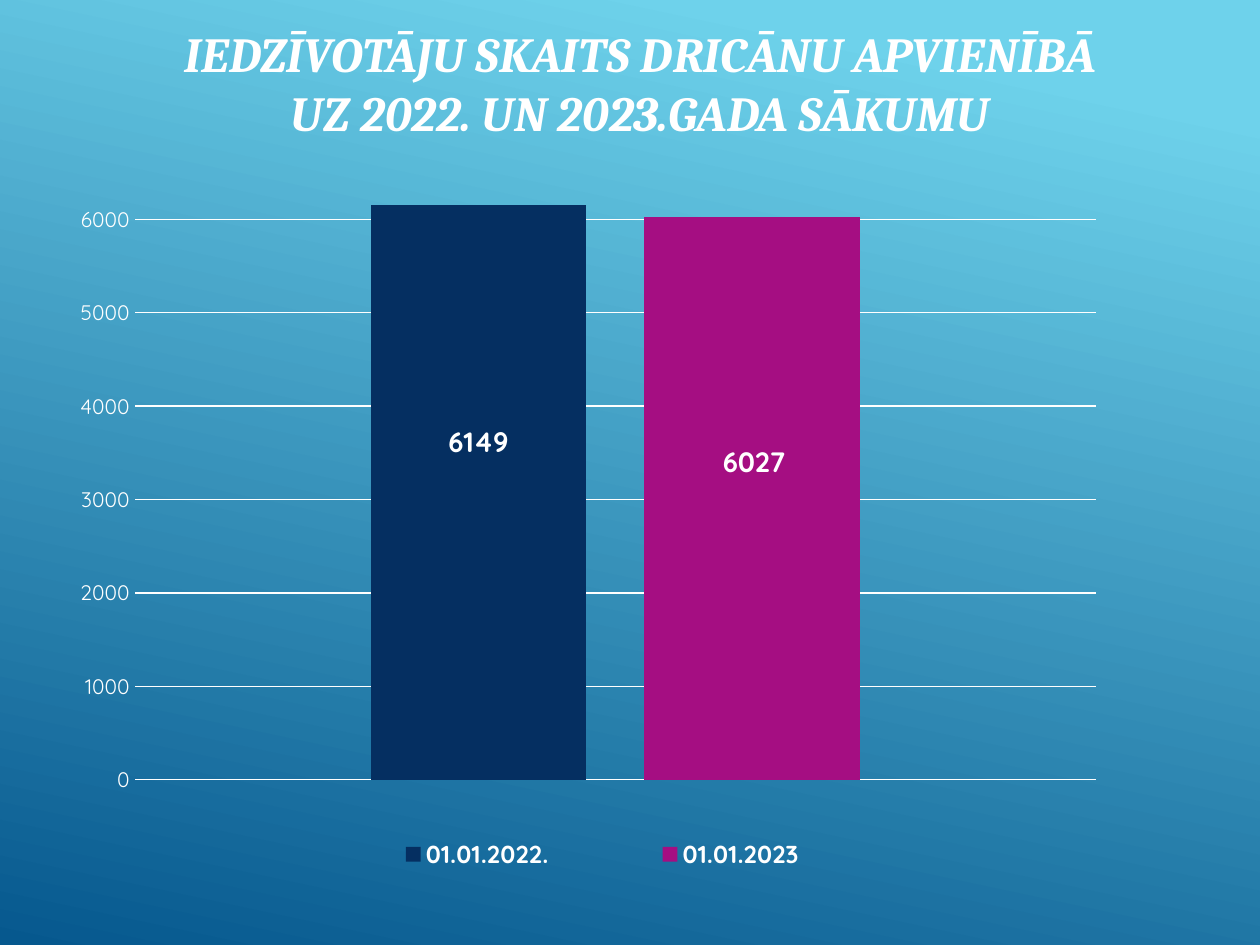
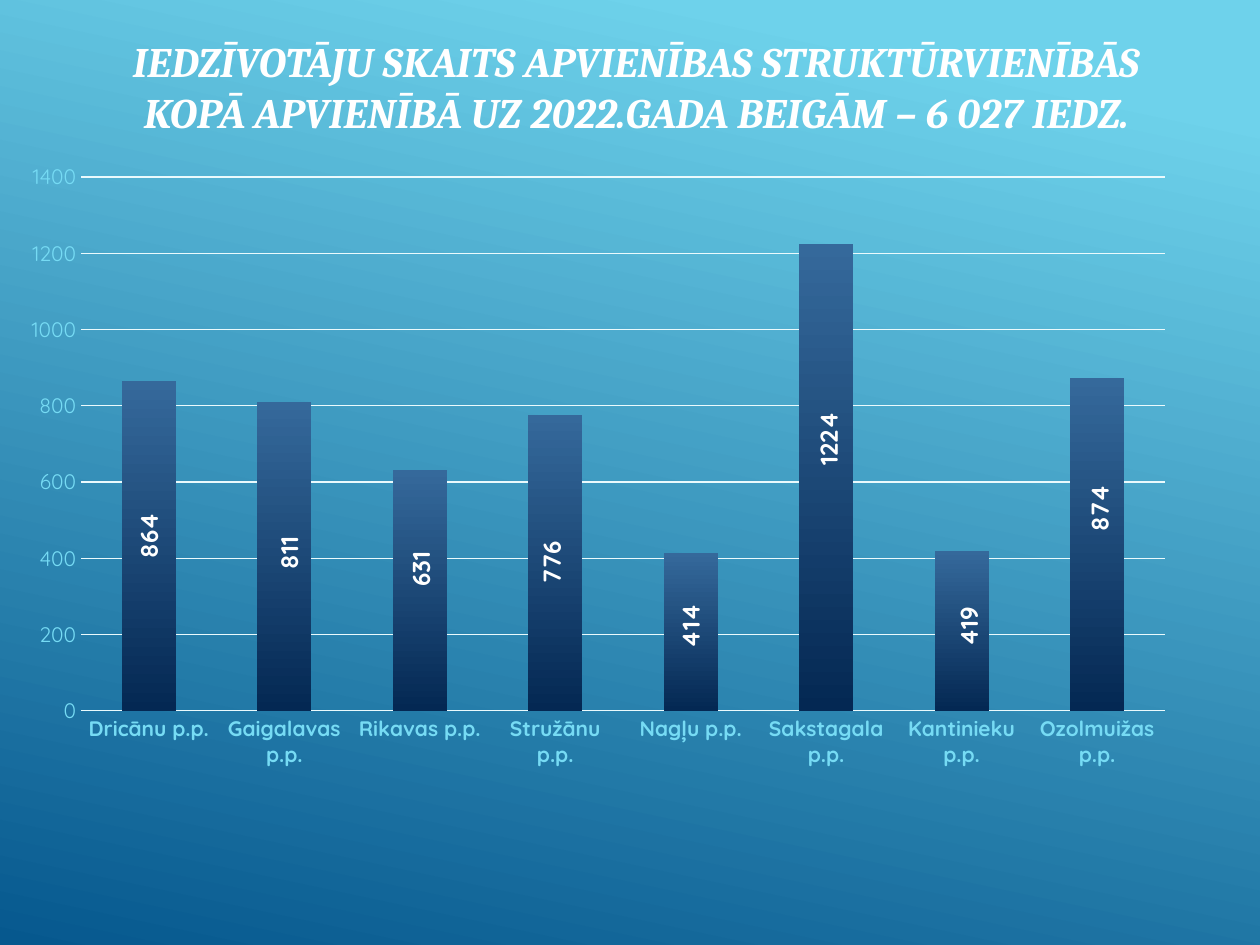
from dataclasses import dataclass

from lxml import etree
from pptx import Presentation
from pptx.chart.axis import ValueAxis
from pptx.chart.chart import Chart
from pptx.chart.data import CategoryChartData
from pptx.chart.series import BarSeries
from pptx.dml.color import RGBColor
from pptx.dml.fill import FillFormat
from pptx.enum.chart import XL_CHART_TYPE, XL_LABEL_POSITION, XL_LEGEND_POSITION, XL_TICK_MARK
from pptx.enum.text import MSO_ANCHOR, PP_ALIGN
from pptx.oxml.ns import qn
from pptx.presentation import Presentation as Deck
from pptx.slide import Slide
from pptx.text.text import Font
from pptx.util import Cm, Pt

CLUSTERED = XL_CHART_TYPE.COLUMN_CLUSTERED
LABEL_CENTER = XL_LABEL_POSITION.CENTER
LEGEND_BOTTOM = XL_LEGEND_POSITION.BOTTOM
NO_TICK = XL_TICK_MARK.NONE
MIDDLE = MSO_ANCHOR.MIDDLE
CENTER = PP_ALIGN.CENTER

WHITE = RGBColor(0xFF, 0xFF, 0xFF)
SKY = RGBColor(0x6E, 0xD2, 0xEB)
DEEP_BLUE = RGBColor(0x06, 0x58, 0x8E)
NAVY = RGBColor(0x05, 0x2F, 0x61)
MAGENTA = RGBColor(0xA5, 0x0E, 0x82)
PALE_CYAN = RGBColor(0xEA, 0xFA, 0xFD)
BRIGHT_CYAN = RGBColor(0x76, 0xDB, 0xF4)
BAR_TOP = RGBColor(0x35, 0x69, 0x9B)
BAR_FOOT = RGBColor(0x04, 0x28, 0x53)

TITLE_FONT = "Cambria"
CHART_FONT = "Quicksand"
VERTICAL = "-5400000"


@dataclass(frozen=True)
class Frame:
    left: float
    top: float
    width: float
    height: float

    def lengths(self) -> tuple[Cm, Cm, Cm, Cm]:
        return Cm(self.left), Cm(self.top), Cm(self.width), Cm(self.height)


@dataclass(frozen=True)
class PercentArea:
    left: float
    top: float
    width: float
    height: float

    def values(self) -> dict[str, object]:
        return {"xMode": "edge", "yMode": "edge",
                "x": self.left / 100, "y": self.top / 100,
                "w": self.width / 100, "h": self.height / 100}


@dataclass(frozen=True)
class Title:
    text: str
    size: int
    frame: Frame


@dataclass(frozen=True)
class Columns:
    frame: Frame
    plot_area: PercentArea
    categories: list[str]
    series: dict[str, list[int]]
    gap: int
    overlap: int
    axis_top: int
    axis_step: int
    axis_color: RGBColor
    grid_color: RGBColor


def style_font(font: Font, face: str, size: int, color: RGBColor, bold: bool = False) -> None:
    font.name = face
    font.size = Pt(size)
    font.bold = bold
    font.color.rgb = color


def fill_gradient(fill: FillFormat, start: RGBColor, end: RGBColor,
                  angle: int, first_stop: float = 0) -> None:
    fill.gradient()
    fill.gradient_angle = angle
    for stop, color, position in zip(fill.gradient_stops, (start, end), (first_stop, 1)):
        stop.color.rgb = color
        stop.position = position


def set_layout(parent: etree._Element, index: int, values: dict[str, object]) -> None:
    for old in parent.findall(qn("c:layout")):
        parent.remove(old)
    layout = etree.Element(qn("c:layout"))
    manual = etree.SubElement(layout, qn("c:manualLayout"))
    for name, value in values.items():
        etree.SubElement(manual, qn(f"c:{name}")).set("val", str(value))
    parent.insert(index, layout)


def add_page(deck: Deck, title: Title) -> Slide:
    page = deck.slides.add_slide(deck.slide_layouts[6])
    fill_gradient(page.background.fill, SKY, DEEP_BLUE, 258, 0.1)
    frame = page.shapes.add_textbox(*title.frame.lengths()).text_frame
    frame.word_wrap = True
    frame.vertical_anchor = MIDDLE
    para = frame.paragraphs[0]
    para.text = title.text
    para.alignment = CENTER
    for span in para.runs:
        style_font(span.font, TITLE_FONT, title.size, WHITE, True)
        span.font.italic = True
    return page


def style_value_axis(axis: ValueAxis, columns: Columns) -> None:
    axis.minimum_scale = 0
    axis.maximum_scale = columns.axis_top
    axis.major_unit = columns.axis_step
    axis.major_tick_mark = NO_TICK
    axis.format.line.fill.background()
    style_font(axis.tick_labels.font, CHART_FONT, 12, columns.axis_color)
    grid = axis.major_gridlines.format.line
    grid.color.rgb = columns.grid_color
    grid.width = Pt(0.75)


def add_columns(page: Slide, columns: Columns) -> Chart:
    data = CategoryChartData()
    data.categories = columns.categories
    for name, values in columns.series.items():
        data.add_series(name, values)
    chart = page.shapes.add_chart(CLUSTERED, *columns.frame.lengths(), data).chart
    chart.has_title = False
    chart.has_legend = False
    style_font(chart.font, CHART_FONT, 10, WHITE)
    plot = chart.plots[0]
    plot.gap_width = columns.gap
    plot.overlap = columns.overlap
    plot.vary_by_categories = False
    style_value_axis(chart.value_axis, columns)
    plot_area = chart._chartSpace.find(".//" + qn("c:plotArea"))
    set_layout(plot_area, 0, {"layoutTarget": "inner", **columns.plot_area.values()})
    return chart


def label_points(series: BarSeries, size: int, shifts: list[tuple[int, int]],
                 rotation: str = "0") -> None:
    for index in range(len(shifts)):
        label = series.points[index].data_label
        label.position = LABEL_CENTER
        style_font(label.font, CHART_FONT, size, WHITE, True)
    for element, (across, down) in zip(series._element.iter(qn("c:dLbl")), shifts):
        set_layout(element, 1, {"x": across / 1000, "y": down / 1000})
        element.find(".//" + qn("a:bodyPr")).set("rot", rotation)
    for leader in series._element.iter(qn("c:showLeaderLines")):
        leader.set("val", "0")


def add_yearly_page(deck: Deck) -> None:
    page = add_page(deck, Title(
        "IEDZĪVOTĀJU SKAITS DRICĀNU APVIENĪBĀ\nUZ 2022. UN 2023.GADA SĀKUMU",
        28, Frame(1.7, 0, 22.4, 3.33)))
    chart = add_columns(page, Columns(
        frame=Frame(1.28, 3.71, 21.39, 14), plot_area=PercentArea(6.7, 2.4, 90.6, 83.4),
        categories=["1"], series={"01.01.2022.": [6149], "01.01.2023": [6027]},
        gap=219, overlap=-27, axis_top=6200, axis_step=1000,
        axis_color=WHITE, grid_color=WHITE))
    chart.category_axis.visible = False
    shifts = [(0, -73), (2, -52)]
    for series, color, shift in zip(chart.plots[0].series, (NAVY, MAGENTA), shifts):
        series.format.fill.solid()
        series.format.fill.fore_color.rgb = color
        label_points(series, 16, [shift])
    chart.has_legend = True
    legend = chart.legend
    legend.position = LEGEND_BOTTOM
    legend.include_in_layout = False
    style_font(legend.font, CHART_FONT, 14, WHITE, True)
    set_layout(legend._element, 1, PercentArea(22.3, 93, 57, 7).values())


def add_parishes_page(deck: Deck) -> None:
    page = add_page(deck, Title(
        "IEDZĪVOTĀJU SKAITS APVIENĪBAS STRUKTŪRVIENĪBĀS\n"
        "KOPĀ APVIENĪBĀ UZ 2022.GADA BEIGĀM – 6 027 IEDZ.",
        24, Frame(0.81, 0, 24.03, 3.48)))
    parishes = ["Dricānu", "Gaigalavas", "Rikavas", "Stružānu",
                "Nagļu", "Sakstagala", "Kantinieku", "Ozolmuižas"]
    chart = add_columns(page, Columns(
        frame=Frame(-0.29, 2.92, 24.41, 16.61), plot_area=PercentArea(7.9, 3.9, 89.5, 64.8),
        categories=[f"{parish} p.p." for parish in parishes],
        series={"Series 1": [864, 811, 631, 776, 414, 1224, 419, 874]},
        gap=150, overlap=0, axis_top=1400, axis_step=200,
        axis_color=BRIGHT_CYAN, grid_color=PALE_CYAN))
    axis = chart.category_axis
    axis.major_tick_mark = NO_TICK
    axis.format.line.color.rgb = PALE_CYAN
    axis.format.line.width = Pt(0.75)
    style_font(axis.tick_labels.font, CHART_FONT, 12, BRIGHT_CYAN, True)
    series = chart.plots[0].series[0]
    fill_gradient(series.format.fill, BAR_TOP, BAR_FOOT, 270)
    shifts = [(0, -13), (4, -4), (1, -26), (-3, -1), (0, -7), (2, -47), (6, -5), (2, -44)]
    label_points(series, 14, shifts, VERTICAL)


def main() -> None:
    deck = Presentation()
    deck.slide_width = Cm(25.4)
    deck.slide_height = Cm(19.05)
    add_yearly_page(deck)
    add_parishes_page(deck)
    deck.save("out.pptx")


if __name__ == "__main__":
    main()
